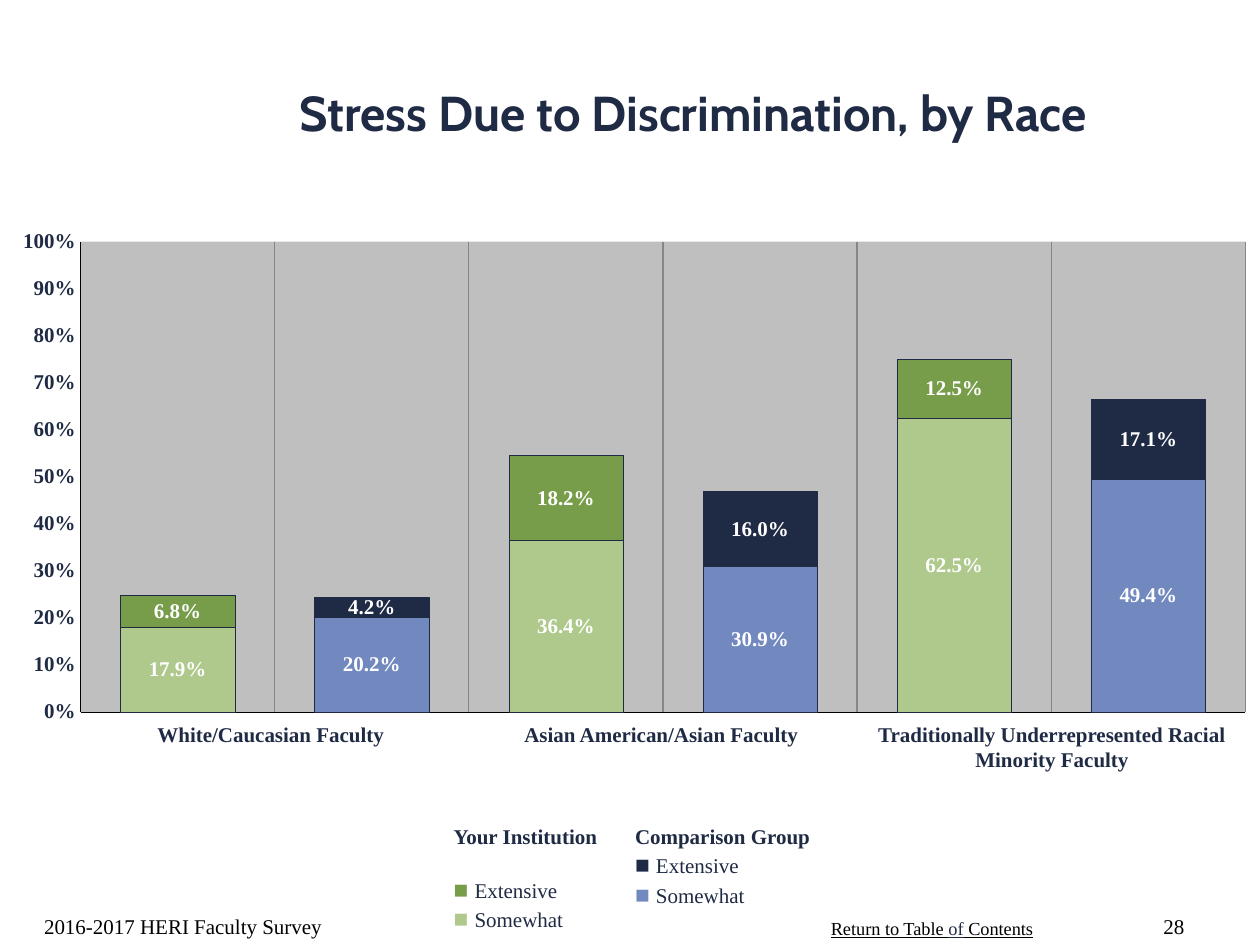
import pptx
import pptx.chart.data
import pptx.dml.color
import pptx.enum.chart
import pptx.enum.text
import pptx.oxml
import pptx.oxml.ns
import pptx.util

RGBColor = pptx.dml.color.RGBColor
Pt = pptx.util.Pt
ALIGN = pptx.enum.text.PP_ALIGN
ANCHOR = pptx.enum.text.MSO_ANCHOR

NAVY = RGBColor(0x1F, 0x2A, 0x44)
BLUE = RGBColor(0x72, 0x89, 0xBF)
GREEN = RGBColor(0x78, 0x9D, 0x4A)
LIGHT_GREEN = RGBColor(0xAF, 0xC9, 0x8D)
PLOT_GRAY = RGBColor(0xBF, 0xBF, 0xBF)
GRID_GRAY = RGBColor(0x86, 0x86, 0x86)
WHITE = RGBColor(0xFF, 0xFF, 0xFF)
BLACK = RGBColor(0, 0, 0)
SERIF = "Times New Roman"

# The slide is a grid of 40 columns and 30 rows; boxes are (left, top, width, height)
COLUMNS, ROWS = 40, 30
SLIDE_WIDTH, SLIDE_HEIGHT = pptx.util.Inches(10), pptx.util.Inches(7.5)


def to_emu(box):
    left, top, width, height = box
    column, row = SLIDE_WIDTH / COLUMNS, SLIDE_HEIGHT / ROWS
    return [round(v) for v in (left * column, top * row, width * column, height * row)]


def add_frame(slide, box, anchor=ANCHOR.TOP, wrap=True):
    frame = slide.shapes.add_textbox(*to_emu(box)).text_frame
    frame.word_wrap = wrap
    frame.vertical_anchor = anchor
    frame.margin_left = frame.margin_right = 0
    frame.margin_top = frame.margin_bottom = 0
    return frame


def add_run(paragraph, text, color, size=12, bold=False, font=SERIF, underline=None):
    run = paragraph.add_run()
    run.text = text
    run.font.name, run.font.size = font, Pt(size)
    run.font.bold, run.font.underline = bold, underline
    run.font.color.rgb = color


def add_title(slide, box):
    title = add_frame(slide, box, ANCHOR.MIDDLE).paragraphs[0]
    title.alignment = ALIGN.CENTER
    add_run(title, "Stress Due to Discrimination, by Race", NAVY, 28, True, "Cabin")


def set_plot_layout(chart, **shares):
    ns = pptx.oxml.ns.nsdecls("c")
    places = "".join(f'<c:{key} val="{value}"/>' for key, value in shares.items())
    layout = pptx.oxml.parse_xml(
        f'<c:layout {ns}><c:manualLayout><c:layoutTarget val="inner"/>'
        f'<c:xMode val="edge"/><c:yMode val="edge"/>{places}</c:manualLayout></c:layout>')
    fill = pptx.oxml.parse_xml(
        f'<c:spPr {ns} {pptx.oxml.ns.nsdecls("a")}><a:solidFill>'
        f'<a:srgbClr val="{PLOT_GRAY}"/></a:solidFill></c:spPr>')
    plot_area = chart._chartSpace.chart.plotArea
    for old in plot_area.findall(pptx.oxml.ns.qn("c:layout")):
        plot_area.remove(old)
    plot_area.insert(0, layout)
    plot_area.append(fill)


def style_series(series, color, comparison_color):
    series.format.fill.solid()
    series.format.fill.fore_color.rgb = color
    parts = [series]
    # Every second bar belongs to the comparison group
    for index in range(1, 6, 2):
        point = series.points[index]
        point.format.fill.solid()
        point.format.fill.fore_color.rgb = comparison_color
        parts.append(point)
    for part in parts:
        part.format.line.color.rgb = NAVY
        part.format.line.width = Pt(0.25)
    labels = series.data_labels
    labels.show_value = True
    labels.number_format, labels.number_format_is_linked = "0.0%", False
    labels.font.name, labels.font.size = SERIF, Pt(12)
    labels.font.bold, labels.font.color.rgb = True, WHITE


def add_stress_chart(slide, box):
    data = pptx.chart.data.CategoryChartData(number_format="0.0%")
    data.categories = ["1", "2", "3", "4", "5", "6"]
    data.add_series("Series 1", (0.179, 0.202, 0.364, 0.309, 0.625, 0.494))
    data.add_series("Series 2", (0.068, 0.042, 0.182, 0.16, 0.125, 0.171))
    chart = slide.shapes.add_chart(
        pptx.enum.chart.XL_CHART_TYPE.COLUMN_STACKED, *to_emu(box), data).chart
    chart.has_legend = chart.has_title = False
    chart.font.name, chart.font.size = SERIF, Pt(12)
    chart.font.bold, chart.font.color.rgb = True, NAVY

    plot = chart.plots[0]
    plot.gap_width, plot.overlap, plot.vary_by_categories = 70, 100, False
    style_series(plot.series[0], LIGHT_GREEN, BLUE)
    style_series(plot.series[1], GREEN, NAVY)

    groups, percent = chart.category_axis, chart.value_axis
    for axis in (groups, percent):
        axis.major_tick_mark = axis.minor_tick_mark = pptx.enum.chart.XL_TICK_MARK.NONE
        axis.format.line.color.rgb = BLACK
        axis.format.line.width = Pt(0.19)
    groups.tick_label_position = pptx.enum.chart.XL_TICK_LABEL_POSITION.NONE
    groups.has_major_gridlines = True
    groups.major_gridlines.format.line.color.rgb = GRID_GRAY
    percent.has_major_gridlines = False
    percent.minimum_scale, percent.maximum_scale, percent.major_unit = 0, 1, 0.1
    percent.tick_labels.number_format = "0%"
    percent.tick_labels.number_format_is_linked = False
    set_plot_layout(chart, x=0.059, y=0.042, w=0.941, h=0.933)


def add_group_names(slide, box):
    names = ("White/Caucasian Faculty", "Asian American/Asian Faculty",
             "Traditionally Underrepresented Racial Minority Faculty")
    left, top, width, height = box
    share = width / len(names)
    for index, name in enumerate(names):
        group = add_frame(slide, (left + index * share, top, share, height)).paragraphs[0]
        group.alignment = ALIGN.CENTER
        add_run(group, name, NAVY, bold=True)


def add_legend(slide, box):
    left, top, width, height = box
    legend = (("Your Institution", GREEN, LIGHT_GREEN, 14),
              ("Comparison Group", NAVY, BLUE, 0))
    share = width / len(legend)
    for index, (heading, extensive, somewhat, gap) in enumerate(legend):
        frame = add_frame(slide, (left + index * share, top, share, height))
        add_run(frame.paragraphs[0], heading, NAVY, bold=True)
        for level, color, space in (("Extensive", extensive, gap), ("Somewhat", somewhat, 0)):
            entry = frame.add_paragraph()
            entry.space_before = Pt(space)
            add_run(entry, "■ ", color, 14, True)
            add_run(entry, level, NAVY)


def add_footer(slide, box):
    left, top, width, height = box
    text_height = height * 0.9
    survey = add_frame(slide, (left, top, width / 3, text_height), ANCHOR.BOTTOM)
    add_run(survey.paragraphs[0], "2016-2017 HERI Faculty Survey", BLACK)

    contents = add_frame(slide, (left + width * 0.69, top, width * 0.18, text_height),
                         ANCHOR.BOTTOM, wrap=False).paragraphs[0]
    for text, color in (("Return to Table ", BLACK), ("of", NAVY), (" Contents", BLACK)):
        add_run(contents, text, color, 10.5, underline=True)

    number = add_frame(slide, (left + width * 0.95, top, width * 0.05, text_height),
                       ANCHOR.BOTTOM).paragraphs[0]
    number.alignment = ALIGN.RIGHT
    add_run(number, "28", BLACK)


def main():
    deck = pptx.Presentation()
    deck.slide_width, deck.slide_height = SLIDE_WIDTH, SLIDE_HEIGHT
    slide = deck.slides.add_slide(deck.slide_layouts[6])
    add_title(slide, (4, 0.7, 36, 5.7))
    add_stress_chart(slide, (0.24, 7, 39.32, 16))
    add_group_names(slide, (2.4, 22.9, 37.2, 2.4))
    add_legend(slide, (14.4, 26.16, 11.52, 3.6))
    add_footer(slide, (1.4, 28, 36.2, 2))
    deck.save("out.pptx")


if __name__ == "__main__":
    main()
